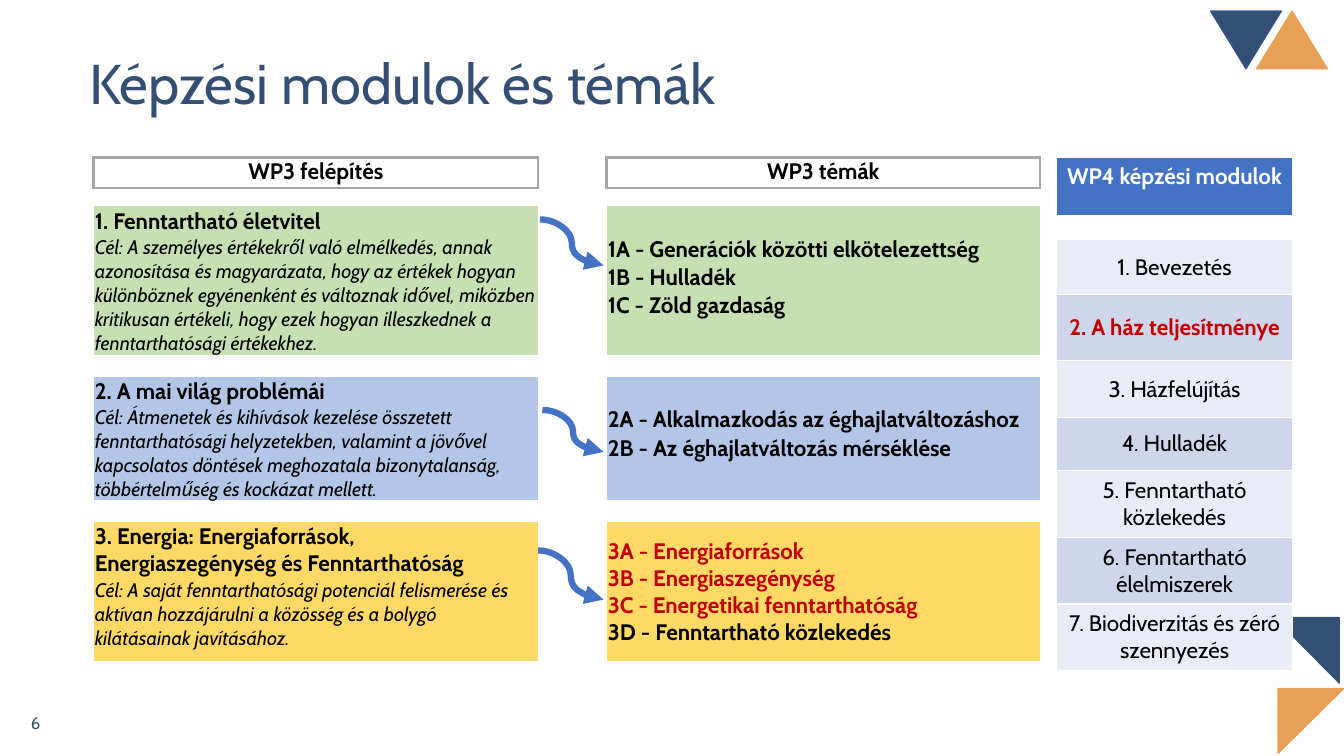
import pptx
import pptx.dml.color
import pptx.enum.shapes
import pptx.enum.text
import pptx.oxml
import pptx.oxml.ns
import pptx.util
from pptx.util import Cm

qn = pptx.oxml.ns.qn
ALIGN = pptx.enum.text.PP_ALIGN
ANCHOR = pptx.enum.text.MSO_ANCHOR
SHAPE = pptx.enum.shapes.MSO_SHAPE

COLORS = {
    "navy": "354F74", "navy_edge": "31538F", "orange": "E89F56",
    "blue": "4472C4", "gray": "A6A6A6", "white": "FFFFFF",
    "black": "000000", "red": "C00000", "green": "C6E0B4",
    "sky": "B3C6E7", "yellow": "FFD966", "pale": "E9EBF5", "lilac": "CFD5EA",
}
FORMATS = {
    "title": {"size": pptx.util.Pt(40), "bold": False},
    "number": {"size": pptx.util.Pt(12), "bold": False},
    "strong": {"size": pptx.util.Pt(16), "bold": True},
    "plain": {"size": pptx.util.Pt(16), "bold": False},
    "goal": {"size": pptx.util.Pt(14), "bold": False, "italic": True},
}
PLAIN_TABLE = "{2D5ABB26-0587-4C30-8999-92F81FD0307C}"
NARROW = (0.03, 0.03, 0.03, 0)

# Fill, row heights, heading, goal, topics with their colours
BLOCKS = [
    ("green", (0.71, 0.71, 0.72, 1.6), "1. Fenntartható életvitel",
     "Cél: A személyes értékekről való elmélkedés, annak azonosítása és "
     "magyarázata, hogy az értékek hogyan különböznek egyénenként és változnak "
     "idővel, miközben kritikusan értékeli, hogy ezek hogyan illeszkednek a "
     "fenntarthatósági értékekhez.",
     [("1A - Generációk közötti elkötelezettség", "black"),
      ("1B - Hulladék", "black"), ("1C - Zöld gazdaság", "black")]),
    ("sky", (0.71, 0.72, 1.67), "2. A mai világ problémái",
     "Cél: Átmenetek és kihívások kezelése összetett fenntarthatósági "
     "helyzetekben, valamint a jövővel kapcsolatos döntések meghozatala "
     "bizonytalanság, többértelműség és kockázat mellett.",
     [("2A - Alkalmazkodás az éghajlatváltozáshoz", "black"),
      ("2B - Az éghajlatváltozás mérséklése", "black")]),
    ("yellow", (1.4, 2.1),
     "3. Energia: Energiaforrások, Energiaszegénység és Fenntarthatóság",
     "Cél: A saját fenntarthatósági potenciál felismerése és aktívan "
     "hozzájárulni a közösség és a bolygó kilátásainak javításához.",
     [("3A - Energiaforrások", "red"), ("3B - Energiaszegénység", "red"),
      ("3C - Energetikai fenntarthatóság", "red"),
      ("3D - Fenntartható közlekedés", "black")]),
]
MODULES = [
    ("1. Bevezetés", 1.38), ("2. A ház teljesítménye", 1.67),
    ("3. Házfelújítás", 1.43), ("4. Hulladék", 1.33),
    ("5. Fenntartható közlekedés", 1.7), ("6. Fenntartható élelmiszerek", 1.67),
    ("7. Biodiverzitás és zéró szennyezés", 1.67),
]


def rgb(name):
    return pptx.dml.color.RGBColor.from_string(COLORS[name])


class Deck:
    def __init__(self, font):
        self.font = font
        self.show = pptx.Presentation()
        self.show.slide_width, self.show.slide_height = Cm(33.87), Cm(19.05)
        self.slide = self.show.slides.add_slide(self.show.slide_layouts[6])

    def put_lines(self, frame, lines, style, align=ALIGN.LEFT):
        for i, (text, color) in enumerate(lines):
            paragraph = frame.add_paragraph() if i else frame.paragraphs[0]
            paragraph.alignment = align
            run = paragraph.add_run()
            run.text = text
            for key, value in {"name": self.font, **FORMATS[style]}.items():
                setattr(run.font, key, value)
            run.font.color.rgb = rgb(color)

    def text(self, box, text, style, color):
        frame = self.slide.shapes.add_textbox(*map(Cm, box)).text_frame
        frame.word_wrap = True
        frame.vertical_anchor = ANCHOR.MIDDLE
        self.put_lines(frame, [(text, color)], style)
        return frame

    def triangle(self, box, fill, edge, rotation, apex):
        shape = self.slide.shapes.add_shape(SHAPE.ISOSCELES_TRIANGLE, *map(Cm, box))
        shape.adjustments[0] = apex
        shape.rotation = rotation
        shape.shadow.inherit = False
        shape.fill.solid()
        shape.fill.fore_color.rgb = rgb(fill)
        shape.line.color.rgb = rgb(edge)
        shape.line.width = pptx.util.Pt(1)

    def arrow(self, *ends):
        curve = pptx.enum.shapes.MSO_CONNECTOR.CURVE
        arrow = self.slide.shapes.add_connector(curve, *map(Cm, ends))
        arrow.line.color.rgb = rgb("blue")
        arrow.line.width = pptx.util.Pt(4.5)
        line = arrow.line._get_or_add_ln()
        line.append(line.makeelement(qn("a:tailEnd"), {"type": "triangle"}))
        properties = line.getparent()
        properties.append(properties.makeelement(qn("a:effectLst"), {}))

    def table(self, left, top, widths, heights):
        frame = self.slide.shapes.add_table(
            len(heights), len(widths), Cm(left), Cm(top),
            Cm(sum(widths)), Cm(sum(heights)))
        table = frame.table
        table.first_row = table.horz_banding = False
        table._tbl.tblPr.find(qn("a:tableStyleId")).text = PLAIN_TABLE
        for column, width in zip(table.columns, widths):
            column.width = Cm(width)
        for row, height in zip(table.rows, heights):
            row.height = Cm(height)
        # Small empty paragraphs keep the spacer rows low
        for cell in table.iter_cells():
            self.margins(cell, NARROW)
            mark = cell.text_frame.paragraphs[0]._p
            mark.append(mark.makeelement(qn("a:endParaRPr"), {"sz": "800"}))
        return table

    def margins(self, cell, values):
        for side, value in zip(("left", "top", "right", "bottom"), values):
            setattr(cell, "margin_" + side, Cm(value))

    def fill(self, cell, color):
        cell.fill.solid()
        cell.fill.fore_color.rgb = rgb(color)

    def border(self, cell, color, **widths):
        properties = cell._tc.get_or_add_tcPr()
        for side in "LRTB":
            width = int(pptx.util.Pt(widths.get(side, widths["every"])))
            properties.append(pptx.oxml.parse_xml(
                f'<a:ln{side} {pptx.oxml.ns.nsdecls("a")} w="{width}"><a:solidFill>'
                f'<a:srgbClr val="{COLORS[color]}"/></a:solidFill></a:ln{side}>'))


def main():
    deck = Deck("Cabin")

    # Page number, corner triangles and title
    deck.text((0.53, 17.7, 7.62, 1.02), "6", "number", "navy")
    deck.triangle((31.67, 0.28, 1.78, 1.45), "orange", "orange", 0, 0.5)
    deck.triangle((32.21, 17.35, 1.65, 1.63), "orange", "orange", 180, 1)
    deck.triangle((32.11, 15.57, 1.65, 1.63), "navy", "navy", 270, 1)
    deck.triangle((30.51, 0.28, 1.78, 1.45), "navy", "navy_edge", 180, 0.5)
    title = deck.text((2.01, 0.33, 29.21, 3.68), "Képzési modulok és témák",
                      "title", "navy")
    title.paragraphs[0].line_spacing = 0.9

    # WP3 structure and topics
    heights = [0.78, 0.46]
    starts = []
    for block in BLOCKS:
        starts.append(len(heights))
        heights += [*block[1], 0.55]
    wp3 = deck.table(2.36, 3.96, (11.2, 1.73, 10.92), heights[:-1])
    for column, heading in ((0, "WP3 felépítés"), (2, "WP3 témák")):
        cell = wp3.cell(0, column)
        deck.put_lines(cell.text_frame, [(heading, "black")], "strong", ALIGN.CENTER)
        deck.border(cell, "gray", every=2.25)
    for start, (color, rows, heading, goal, topics) in zip(starts, BLOCKS):
        last = start + len(rows) - 1
        for row in range(start, last + 1):
            for column in (0, 2):
                deck.fill(wp3.cell(row, column), color)
        deck.put_lines(wp3.cell(start, 0).text_frame, [(heading, "black")], "strong")
        goal_cell = wp3.cell(start + 1, 0)
        if last > start + 1:
            goal_cell.merge(wp3.cell(last, 0))
        deck.put_lines(goal_cell.text_frame, [(goal, "black")], "goal")
        if len(topics) < len(rows):
            for row, topic in enumerate(topics, start + 1):
                deck.put_lines(wp3.cell(row, 2).text_frame, [topic], "strong")
        else:
            topic_cell = wp3.cell(start, 2)
            topic_cell.merge(wp3.cell(last, 2))
            topic_cell.vertical_anchor = ANCHOR.MIDDLE
            deck.put_lines(topic_cell.text_frame, topics, "strong")

    # Arrows from structure to topics
    for left, top, bottom in ((13.61, 5.53, 6.69), (13.67, 10.33, 11.39),
                              (13.56, 13.87, 15.11)):
        deck.arrow(left, top, 15.21, bottom)

    # WP4 training modules
    wp4 = deck.table(26.63, 3.97, (5.94,), [1.5, 0.57, *(h for _, h in MODULES)])
    header = wp4.cell(0, 0)
    deck.margins(header, (0.25, 0.13, 0.25, 0.13))
    deck.border(header, "white", every=1, B=3)
    deck.fill(header, "blue")
    deck.put_lines(header.text_frame, [("WP4 képzési modulok", "white")], "strong",
                   ALIGN.CENTER)
    deck.fill(wp4.cell(1, 0), "white")
    for i, (module, _) in enumerate(MODULES):
        cell = wp4.cell(i + 2, 0)
        deck.margins(cell, (0.08, 0.05, 0.08, 0.05))
        deck.border(cell, "white", every=1)
        deck.fill(cell, "lilac" if i % 2 else "pale")
        cell.vertical_anchor = ANCHOR.MIDDLE
        style, color = ("strong", "red") if i == 1 else ("plain", "black")
        deck.put_lines(cell.text_frame, [(module, color)], style, ALIGN.CENTER)

    deck.show.save("out.pptx")


if __name__ == "__main__":
    main()
